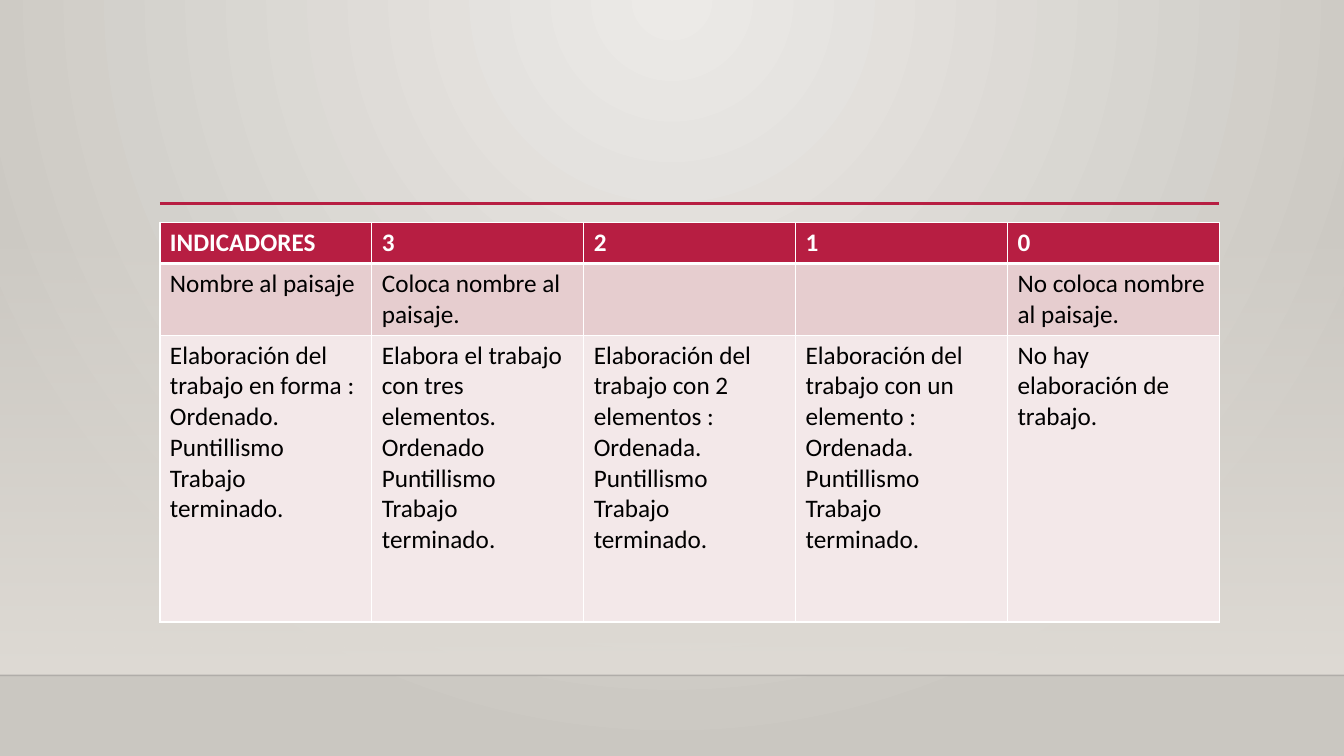
from pptx import Presentation
from pptx.dml.color import RGBColor
from pptx.enum.shapes import MSO_CONNECTOR, MSO_SHAPE
from pptx.oxml import parse_xml
from pptx.oxml.ns import nsdecls, qn
from pptx.util import Cm, Pt

WHITE = RGBColor(0xFF, 0xFF, 0xFF)
BLACK = RGBColor(0x00, 0x00, 0x00)
NEAR_BLACK = RGBColor(0x00, 0x00, 0x01)
CRIMSON = RGBColor(0xB7, 0x1E, 0x42)
ROSE = RGBColor(0xE6, 0xCD, 0xCF)
PALE_ROSE = RGBColor(0xF3, 0xE8, 0xE9)
BACK_LIGHT = RGBColor(0xEC, 0xEA, 0xE7)
BACK_DARK = RGBColor(0xCA, 0xC7, 0xC1)
SAND = RGBColor(0xDF, 0xDB, 0xD5)

SLIDE_W, SLIDE_H = Cm(33.87), Cm(19.05)
FLOOR_Y = Cm(17.02)
TABLE_X, TABLE_Y = Cm(4.03), Cm(5.6)
COL_W = Cm(5.34)
ROW_HEIGHTS = [Cm(1.04), Cm(1.79), Cm(7.23)]

HEADER = {"size": Pt(18), "name": "Calibri", "bold": True}
BODY = {"size": Pt(18), "name": "Calibri", "bold": False}
ROW_STYLES = [(CRIMSON, WHITE, HEADER), (ROSE, BLACK, BODY), (PALE_ROSE, BLACK, BODY)]

RUBRIC = [
    ["INDICADORES", "3", "2", "1", "0"],
    ["Nombre al paisaje", "Coloca nombre al paisaje.", "", "",
     "No coloca nombre al paisaje."],
    ["Elaboración del trabajo en forma : Ordenado.\nPuntillismo\nTrabajo terminado.",
     "Elabora el trabajo con tres elementos.\nOrdenado\nPuntillismo\nTrabajo terminado.",
     "Elaboración del trabajo con 2 elementos : Ordenada.\nPuntillismo\nTrabajo terminado.",
     "Elaboración del trabajo con un elemento : Ordenada.\nPuntillismo\nTrabajo terminado.",
     "No hay elaboración de trabajo."],
]


def set_alpha(color_el, percent):
    color_el.append(parse_xml(f'<a:alpha {nsdecls("a")} val="{percent * 1000}"/>'))


def set_gradient(fill, owner, start, end):
    """Give fill two stops at 0 and 100 % and return its XML element."""
    fill.gradient()
    for stop, color, position in zip(fill.gradient_stops, (start, end), (0, 1)):
        stop.color.rgb = color
        stop.position = position
    return next(owner.iter(qn("a:gradFill")))


def add_background(s):
    grad = set_gradient(s.background.fill, s.element, BACK_LIGHT, BACK_DARK)
    grad.replace(grad.find(qn("a:lin")), parse_xml(
        f'<a:path {nsdecls("a")} path="circle">'
        '<a:fillToRect l="43000" t="0" r="43000" b="100000"/></a:path>'))


def add_fade(s, top):
    """Add the band that goes from clear to sand down to the floor line."""
    sp = s.shapes.add_shape(MSO_SHAPE.RECTANGLE, 0, top, SLIDE_W, FLOOR_Y - top)
    sp.shadow.inherit = False
    sp.line.fill.background()
    grad = set_gradient(sp.fill, sp.element, SAND, SAND)
    sp.fill.gradient_angle = 270
    set_alpha(next(grad.iter(qn("a:srgbClr"))), 0)


def add_rule(s, left, right, y, color, width, opacity=100):
    line = s.shapes.add_connector(MSO_CONNECTOR.STRAIGHT, left, y, right, y)
    line.line.color.rgb = color
    line.line.width = width
    if opacity < 100:
        set_alpha(next(line.element.iter(qn("a:srgbClr"))), opacity)
    line.element.spPr.append(parse_xml(f'<a:effectLst {nsdecls("a")}/>'))


def set_borders(cell, **widths):
    """Draw white borders; widths in points are keyed L, R, T and B."""
    tcPr = cell._tc.get_or_add_tcPr()
    for side, width in widths.items():
        tcPr.append(parse_xml(
            f'<a:ln{side} {nsdecls("a")} w="{Pt(width)}">'
            f'<a:solidFill><a:srgbClr val="{WHITE}"/></a:solidFill></a:ln{side}>'))


def fill_cell(cell, text, fill, color, font):
    cell.fill.solid()
    cell.fill.fore_color.rgb = fill
    cell.text = text
    for p in cell.text_frame.paragraphs:
        for target in [p, *p.runs]:
            for name, value in font.items():
                setattr(target.font, name, value)
            target.font.color.rgb = color


def add_rubric(s):
    cols = len(RUBRIC[0])
    table = s.shapes.add_table(len(RUBRIC), cols, TABLE_X, TABLE_Y,
                               COL_W * cols, sum(ROW_HEIGHTS)).table
    for column in table.columns:
        column.width = COL_W
    for i, (texts, style) in enumerate(zip(RUBRIC, ROW_STYLES)):
        table.rows[i].height = ROW_HEIGHTS[i]
        for j, text in enumerate(texts):
            cell = table.cell(i, j)
            set_borders(cell, L=1, R=1, T=3 if i == 1 else 1, B=3 if i == 0 else 1)
            fill_cell(cell, text, *style)


def main():
    prs = Presentation()
    prs.slide_width, prs.slide_height = SLIDE_W, SLIDE_H
    s = prs.slides.add_slide(prs.slide_layouts[6])
    add_background(s)
    add_fade(s, Cm(5.61))
    add_rule(s, 0, SLIDE_W, FLOOR_Y, NEAR_BLACK, Pt(1), opacity=20)
    add_rule(s, TABLE_X, Cm(30.73), Cm(5.13), CRIMSON, Pt(2.5))
    add_rubric(s)
    prs.save("out.pptx")


if __name__ == "__main__":
    main()
